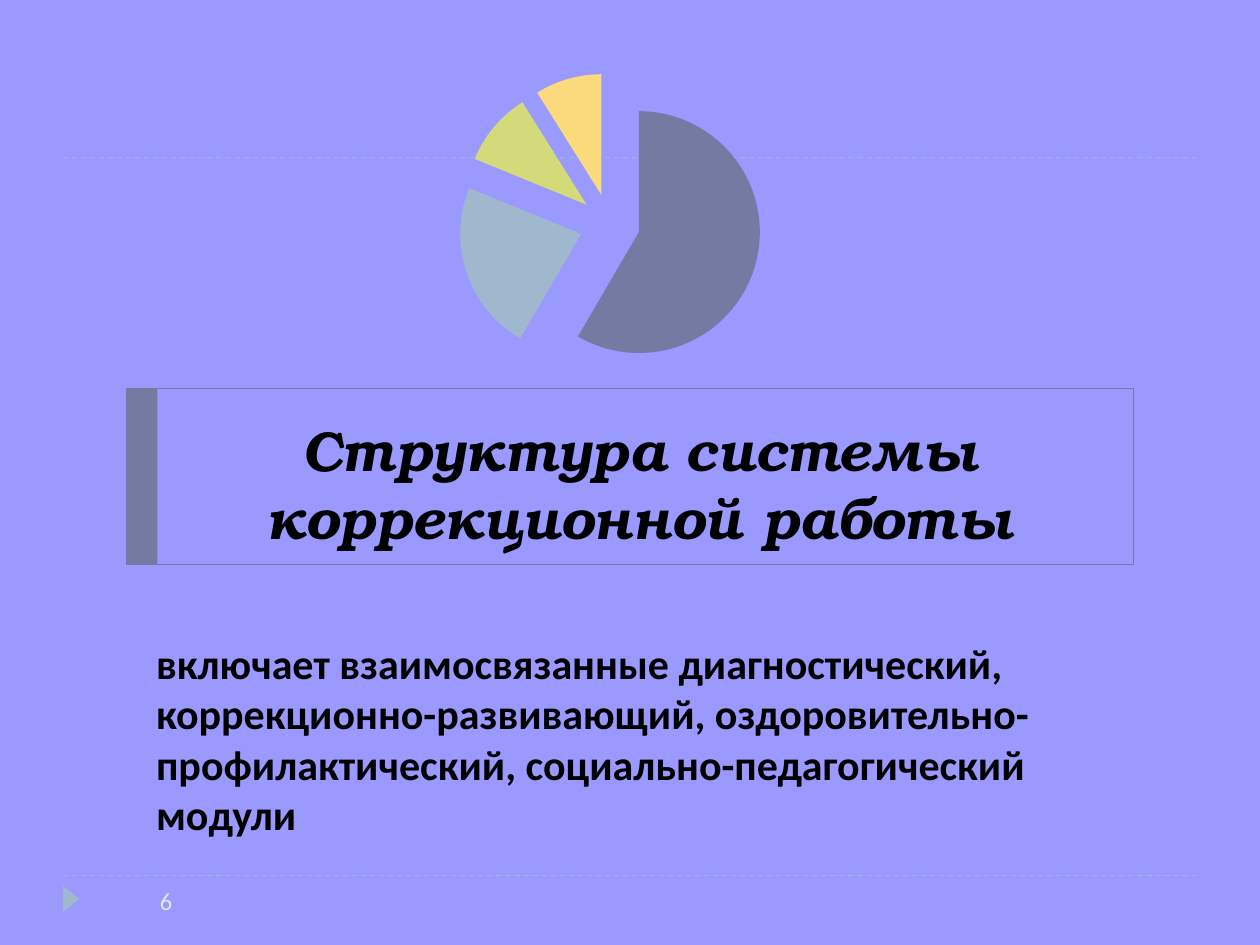
from dataclasses import dataclass
from typing import Optional

import pptx
import pptx.chart.data
import pptx.dml.color
import pptx.enum.chart
import pptx.enum.dml
import pptx.enum.shapes
import pptx.enum.text
import pptx.oxml.ns
import pptx.oxml.xmlchemy
import pptx.util
from pptx.util import Inches

SHAPE = pptx.enum.shapes.MSO_SHAPE
ALIGN = pptx.enum.text.PP_ALIGN
ANCHOR = pptx.enum.text.MSO_ANCHOR
SLATE, MIST, LIME, YELLOW = "727CA3", "9FB8CD", "D2DA7A", "FADA7A"


@dataclass
class Box:
    left: float
    top: float
    width: float
    height: float

    def emu(self):
        return [Inches(v) for v in (self.left, self.top, self.width, self.height)]


@dataclass
class Panel:
    box: Box
    kind: int = SHAPE.RECTANGLE
    fill: Optional[str] = None
    line: Optional[str] = None
    rotation: float = 0


def rgb(color: str):
    return pptx.dml.color.RGBColor.from_string(color)


def paint(fill, color: str):
    fill.solid()
    fill.fore_color.rgb = rgb(color)


def element(tag: str, val: Optional[str] = None):
    el = pptx.oxml.xmlchemy.OxmlElement(tag)
    if val is not None:
        el.set("val", val)
    return el


def add_rule(s, y: float):
    sp = s.shapes.add_connector(pptx.enum.shapes.MSO_CONNECTOR.STRAIGHT,
                                Inches(0.5), Inches(y), Inches(9.5), Inches(y))
    sp.line.color.rgb = rgb(MIST)
    sp.line.width = pptx.util.Pt(0.75)
    sp.line.dash_style = pptx.enum.dml.MSO_LINE.DASH
    sp._element.spPr.append(element("a:effectLst"))


def add_panel(s, panel: Panel):
    sp = s.shapes.add_shape(panel.kind, *panel.box.emu())
    sp.shadow.inherit = False
    sp.rotation = panel.rotation
    if panel.fill:
        paint(sp.fill, panel.fill)
    else:
        sp.fill.background()
    if panel.line:
        sp.line.color.rgb = rgb(panel.line)
        sp.line.width = pptx.util.Pt(0.5)
    else:
        sp.line.fill.background()


def add_text(s, box: Box, text: str, *, size: float, font: str = "Calibri",
             color: str = "000000", bold: bool = False, italic: bool = False,
             align=ALIGN.LEFT, anchor=ANCHOR.MIDDLE, before: float = 0):
    tf = s.shapes.add_textbox(*box.emu()).text_frame
    tf.word_wrap = True
    tf.vertical_anchor = anchor
    p = tf.paragraphs[0]
    p.alignment = align
    p.space_before = pptx.util.Pt(before)
    r = p.add_run()
    r.text = text
    r.font.name, r.font.size = font, pptx.util.Pt(size)
    r.font.bold, r.font.italic = bold, italic
    r.font.color.rgb = rgb(color)


def add_pie(s, box: Box, values: list[int], colors: list[str], diameter: float):
    data = pptx.chart.data.CategoryChartData()
    data.categories = [str(i + 1) for i in range(len(values))]
    data.add_series("Series 1", values)
    chart = s.shapes.add_chart(pptx.enum.chart.XL_CHART_TYPE.PIE, *box.emu(), data).chart
    chart.has_legend = chart.has_title = False
    chart.font.name, chart.font.size = "Calibri", pptx.util.Pt(18)
    chart.font.color.rgb = rgb("FFFFFF")
    plot = chart.plots[0]
    plot.vary_by_categories = False
    series = plot.series[0]
    for i, color in enumerate(colors):
        fmt = series.points[i].format
        paint(fmt.fill, color)
        fmt.line.fill.background()

    # Pull the slices apart
    first_point = series._element.find(pptx.oxml.ns.qn("c:dPt"))
    first_point.addprevious(element("c:explosion", "25"))

    # Centre the plot area in the chart
    area = chart._chartSpace.chart.plotArea
    for old in area.findall(pptx.oxml.ns.qn("c:layout")):
        area.remove(old)
    w, h = diameter / box.width, diameter / box.height
    layout = element("c:layout")
    manual = element("c:manualLayout")
    layout.append(manual)
    for tag, val in (("layoutTarget", "inner"), ("xMode", "edge"), ("yMode", "edge"),
                     ("x", (1 - w) / 2), ("y", (1 - h) / 2), ("w", w), ("h", h)):
        manual.append(element(f"c:{tag}", str(val)))
    area.insert(0, layout)


def main():
    prs = pptx.Presentation()
    prs.slide_width, prs.slide_height = Inches(10), Inches(7.5)
    s = prs.slides.add_slide(prs.slide_layouts[6])
    paint(s.background.fill, "9999FF")

    # Rules, title frame and page marker
    for y in (6.95, 1.25):
        add_rule(s, y)
    for panel in (
        Panel(Box(0.46, 7.07, 0.21, 0.13), SHAPE.ISOSCELES_TRIANGLE, fill=MIST, rotation=90),
        Panel(Box(1, 3.08, 8, 1.4), line=SLATE),
        Panel(Box(1, 3.08, 0.25, 1.4), fill=SLATE),
    ):
        add_panel(s, panel)

    # Title, body and page number
    add_text(s, Box(1.33, 3.25, 7.5, 1.17), "Структура системы коррекционной работы",
             size=32, font="TeX Gyre Bonum", bold=True, italic=True, align=ALIGN.CENTER)
    add_text(s, Box(1.14, 5.01, 7.89, 1.8),
             "включает взаимосвязанные диагностический, коррекционно-развивающий, "
             "оздоровительно-профилактический, социально-педагогический модули",
             size=24, bold=True, anchor=ANCHOR.TOP, before=6)
    add_text(s, Box(1.17, 6.95, 1.66, 0.4), "6", size=14, color="DDE9EC")

    # Pie of the four modules
    add_pie(s, Box(1.85, 0.44, 5.98, 2.68), [59, 23, 10, 9],
            [SLATE, MIST, LIME, YELLOW], diameter=2.4)

    prs.save("out.pptx")


if __name__ == "__main__":
    main()
